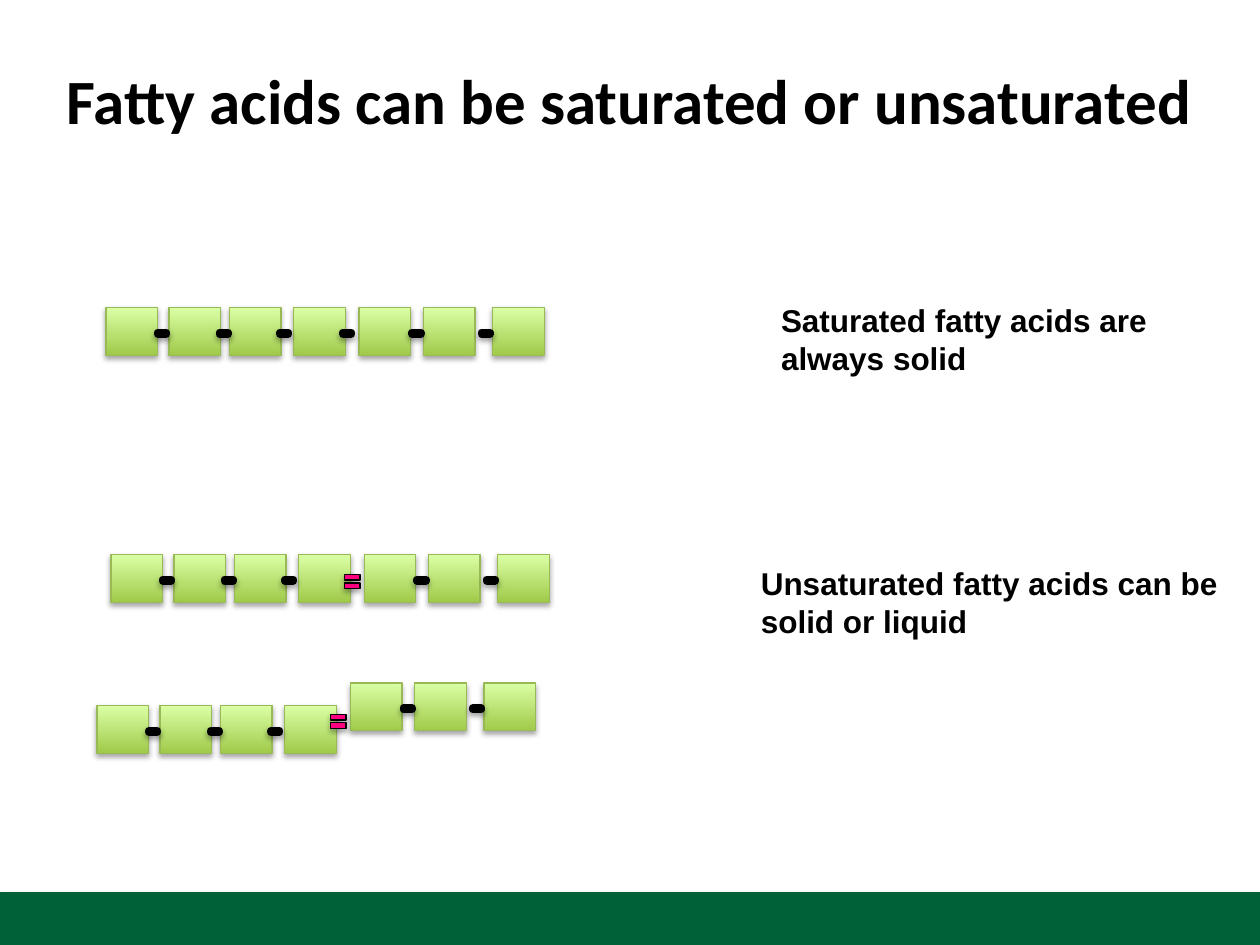
from lxml import etree
from pptx import Presentation
from pptx.dml.color import RGBColor
from pptx.enum.shapes import MSO_SHAPE
from pptx.enum.text import MSO_ANCHOR, PP_ALIGN
from pptx.oxml.ns import nsdecls
from pptx.util import Inches, Pt

RECT, MINUS, EQUAL = MSO_SHAPE.RECTANGLE, MSO_SHAPE.MATH_MINUS, MSO_SHAPE.MATH_EQUAL
LEFT, CENTER = PP_ALIGN.LEFT, PP_ALIGN.CENTER
TOP, MIDDLE = MSO_ANCHOR.TOP, MSO_ANCHOR.MIDDLE

COLORS = {
    "ink": "000000", "footer": "006036", "edge": "98B955", "double": "FF0080",
    "block low": "A0CA4A", "block high": "DAFFA5",
    "bond low": "3F80CE", "bond high": "A4C4FF",
}

# lines, box, font, size, align, anchor, wrap
TEXTS = [
    (["Fatty acids can be saturated or unsaturated"],
     (0.17, 0.3, 9.65, 0.97), "Calibri", 36, CENTER, MIDDLE, True),
    (["Saturated fatty acids are always solid"],
     (6.1, 2.34, 3.58, 0.71), "Arial", 18, LEFT, TOP, True),
    (["Unsaturated fatty acids can be", "solid or liquid"],
     (5.94, 4.43, 3.86, 0.71), "Arial", 18, LEFT, TOP, False),
]

# left, top, index of the double bond, lift of the blocks after it
CHAINS = [
    (0.84, 2.44, None, 0),
    (0.88, 4.4, 3, 0),
    (0.77, 5.6, 3, 0.18),
]
BLOCKS = [0, 0.5, 0.98, 1.49, 2.01, 2.52, 3.07]
BONDS = [0.4, 0.89, 1.37, 1.87, 2.42, 2.97]
DOUBLE_X = 1.83

SHADOW = f"""<a:effectLst {nsdecls("a")}>
  <a:outerShdw blurRad="{Pt(3.1)}" dist="{Pt(1.8)}" dir="5400000" rotWithShape="0">
    <a:srgbClr val="{COLORS["ink"]}"><a:alpha val="35000"/></a:srgbClr>
  </a:outerShdw>
</a:effectLst>"""


def rgb(name):
    return RGBColor.from_string(COLORS[name])


def add_part(shapes, kind, box, fill, line=None, width=0.75):
    """Add a shadowed shape; a pair of fill names runs from bottom to top."""
    part = shapes.add_shape(kind, *map(Inches, box))
    if isinstance(fill, tuple):
        part.fill.gradient()
        part.fill.gradient_angle = 90
        for stop, name in zip(part.fill.gradient_stops, fill):
            stop.color.rgb = rgb(name)
    else:
        part.fill.solid()
        part.fill.fore_color.rgb = rgb(fill)
    if line:
        part.line.color.rgb = rgb(line)
        part.line.width = Pt(width)
    else:
        part.line.fill.background()
    part.shadow.inherit = False
    props = part.element.spPr
    props.replace(props.effectLst, etree.fromstring(SHADOW))


def add_text(slide, lines, box, font, size, align, anchor, wrap):
    frame = slide.shapes.add_textbox(*map(Inches, box)).text_frame
    frame.word_wrap = wrap
    frame.vertical_anchor = anchor
    frame.text = "\n".join(lines)
    for para in frame.paragraphs:
        para.alignment = align
        para.font.name = font
        para.font.size = Pt(size)
        para.font.bold = True
        para.font.color.rgb = rgb("ink")


def add_chain(slide, left, top, double, lift):
    shapes = slide.shapes.add_group_shape().shapes

    def level(i):
        return top - lift if double is not None and i > double else top

    for i, x in enumerate(BLOCKS):
        add_part(shapes, RECT, (left + x, level(i), 0.41, 0.38),
                 ("block low", "block high"), "edge")
    for i, x in enumerate(BONDS):
        if i != double:
            add_part(shapes, MINUS, (left + x, level(i) + 0.18, 0.09, 0.05),
                     ("bond low", "bond high"), "ink", 4.5)
    if double is not None:
        add_part(shapes, EQUAL, (left + DOUBLE_X, top + 0.12 - lift / 2, 0.17, 0.19),
                 "double", "ink")


def main():
    deck = Presentation()
    deck.slide_width, deck.slide_height = Inches(10), Inches(7.5)
    slide = deck.slides.add_slide(deck.slide_layouts[6])
    add_part(slide.shapes, RECT, (0, 7.08, 10, 0.42), "footer")
    for text in TEXTS:
        add_text(slide, *text)
    for chain in CHAINS:
        add_chain(slide, *chain)
    deck.save("out.pptx")


if __name__ == "__main__":
    main()
